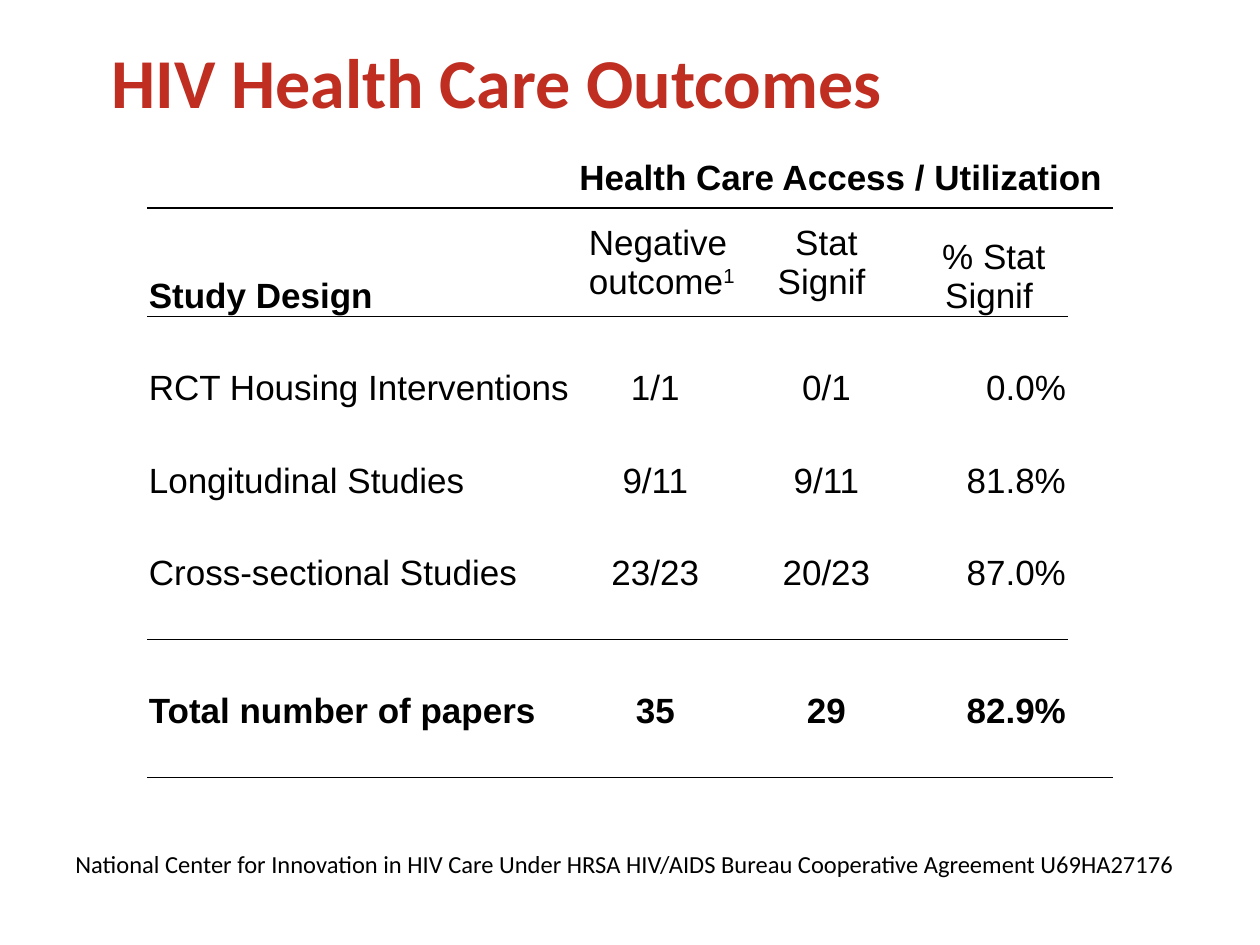
from lxml.etree import SubElement
from pptx import Presentation
from pptx.dml.color import RGBColor
from pptx.enum.text import MSO_ANCHOR as ANC, PP_ALIGN as AL
from pptx.oxml import parse_xml
from pptx.oxml.ns import nsdecls, qn
from pptx.util import Cm, Pt


def style(r, color="000000", **values):
    r.font.color.rgb = RGBColor.from_string(color)
    for name, value in values.items():
        setattr(r.font, name, value)


def fill_cell(cell, text, align=AL.LEFT, anchor=ANC.BOTTOM, bold=False):
    cell.vertical_anchor = anchor
    tf = cell.text_frame
    tf.text = text
    for p in tf.paragraphs:
        p.alignment = align
        for r in p.runs:
            style(r, name="Arial", size=Pt(20), bold=bold)


prs = Presentation()
prs.slide_width, prs.slide_height = Cm(25.4), Cm(19.05)
s = prs.slides.add_slide(prs.slide_layouts[5])

title = s.shapes.title
title_format = {"left": Cm(1.04), "top": Cm(0), "width": Cm(22.86), "height": Cm(2.59)}
for name, value in title_format.items():
    setattr(title, name, value)
tf = title.text_frame
tf.text = "HIV Health Care Outcomes"
tf.vertical_anchor = ANC.BOTTOM
tf.margin_left = Cm(1.21)
p = tf.paragraphs[0]
p.alignment = AL.LEFT
style(p.runs[0], "BF2E21", name="Calibri", size=Pt(40), bold=True)

widths = [3.35, 3.12, 2.21, 3.12, 0.33, 3.12, 0.33, 2.97, 0.91]
heights = [1.22, 2.18] + [0.93] * 10
frame = s.shapes.add_table(len(heights), len(widths), Cm(2.97), Cm(2.97),
                           Cm(sum(widths)), Cm(sum(heights)))
tbl = frame.table
tbl.first_row = tbl.horz_banding = False
frame._element.graphic.graphicData.tbl.tblPr.find(qn("a:tableStyleId")).text = (
    "{2D5ABB26-0587-4C30-8999-92F81FD0307C}")
for col, width in zip(tbl.columns, widths):
    col.width = Cm(width)
for row, height in zip(tbl.rows, heights):
    row.height = Cm(height)

cell_format = {"margin_left": Cm(0.03), "margin_right": Cm(0.03),
               "margin_top": Cm(0.03), "margin_bottom": Cm(0)}
rules = {0: (9, 1), 1: (8, 0.5), 8: (8, 0.5), 11: (9, 0.5)}
for i in range(len(heights)):
    ruled, weight = rules.get(i, (0, 0))
    for j in range(len(widths)):
        cell = tbl.cell(i, j)
        for name, value in cell_format.items():
            setattr(cell, name, value)
        cell.fill.background()
        if j < ruled:
            cell._tc.get_or_add_tcPr().insert(0, parse_xml(
                f'<a:lnB {nsdecls("a")} w="{Pt(weight)}"><a:solidFill>'
                '<a:srgbClr val="000000"/></a:solidFill></a:lnB>'))

for i, first, last in [(0, 3, 8), (1, 0, 1), (1, 3, 4), (3, 0, 2),
                       (5, 0, 1), (7, 0, 2), (10, 0, 2)]:
    tbl.cell(i, first).merge(tbl.cell(i, last))

fill_cell(tbl.cell(0, 3), "Health Care Access / Utilization", anchor=ANC.MIDDLE, bold=True)
fill_cell(tbl.cell(1, 0), "Study Design", bold=True)
fill_cell(tbl.cell(1, 3), "Negative\voutcome", anchor=ANC.MIDDLE)
fill_cell(tbl.cell(1, 5), "Stat\nSignif ", AL.CENTER, ANC.MIDDLE)
fill_cell(tbl.cell(1, 7), "% Stat\nSignif ", AL.CENTER)

negative = tbl.cell(1, 3)
negative.margin_left = Cm(0.22)
r = negative.text_frame.paragraphs[0].add_run()
r.text = "1"
style(r, name="Arial", size=Pt(20), bold=False)
r.font._element.set("baseline", "30000")

studies = {
    3: ("RCT Housing Interventions", "1/1", "0/1", "0.0%"),
    5: ("Longitudinal Studies", "9/11", "9/11", "81.8%"),
    7: ("Cross-sectional Studies", "23/23", "20/23", "87.0%"),
    10: ("Total number of papers", "35", "29", "82.9%"),
}
aligns = [AL.LEFT, AL.CENTER, AL.CENTER, AL.RIGHT]
for i, texts in studies.items():
    for j, text, align in zip((0, 3, 5, 7), texts, aligns):
        fill_cell(tbl.cell(i, j), text, align, bold=i == 10)

sp = s.shapes.add_textbox(Cm(1.27), Cm(16.21), Cm(22.86), Cm(1.63))
tf = sp.text_frame
tf.word_wrap = True
tf.vertical_anchor = ANC.BOTTOM
r = tf.paragraphs[0].add_run()
r.text = ("National Center for Innovation in HIV Care Under HRSA HIV/AIDS Bureau "
          "Cooperative Agreement U69HA27176")
style(r, name="Calibri", size=Pt(14))

prs.save("out.pptx")
